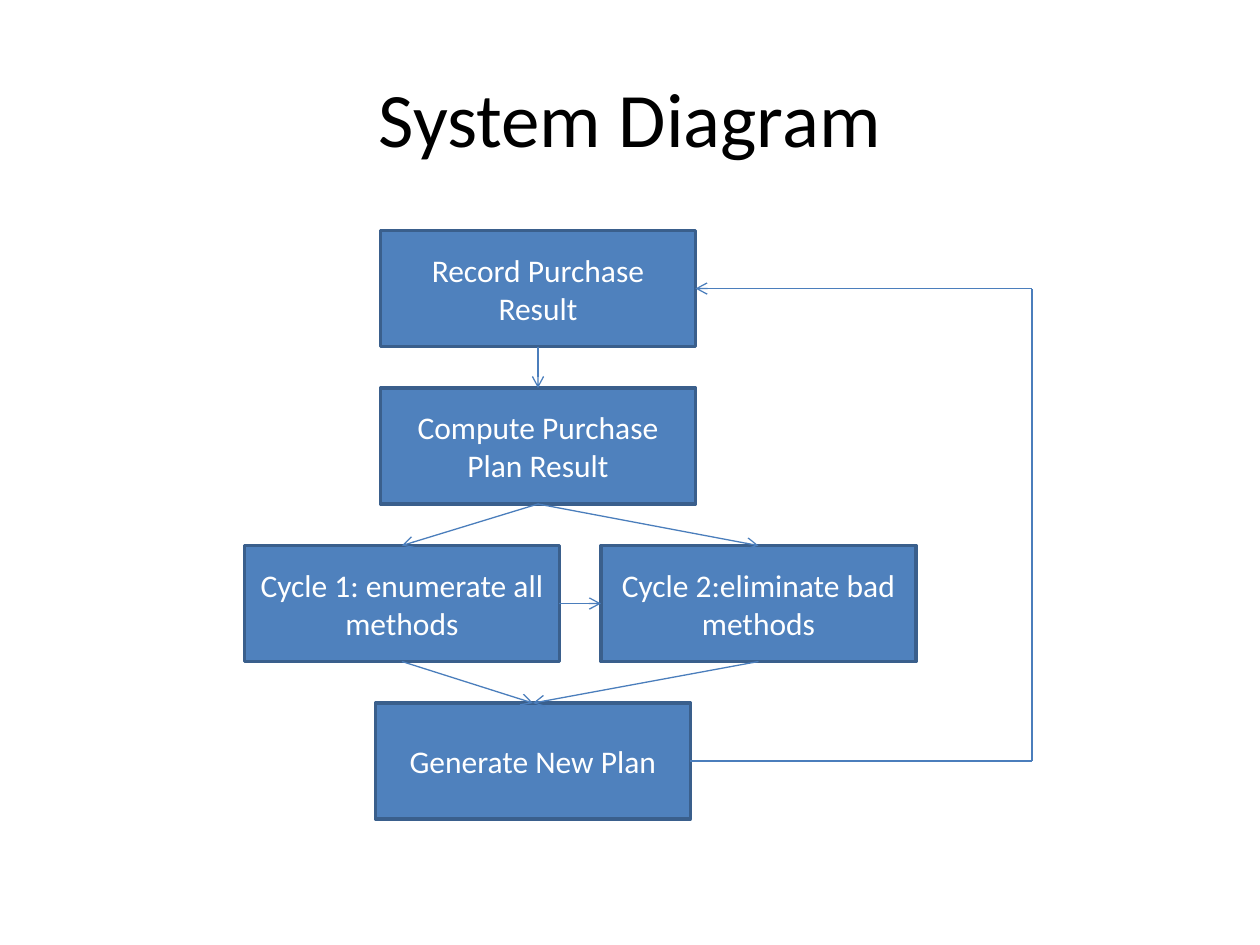
from lxml import etree
from pptx import Presentation
from pptx.dml.color import RGBColor
from pptx.enum import shapes, text
from pptx.oxml.ns import qn
from pptx.util import Inches, Pt

BOX_WIDTH, BOX_HEIGHT = 2.5, 0.92
FIRST_ROW, ROW_STEP = 1.83, 1.25
LOOP_X = 8.19
TOP, LEFT, BOTTOM, RIGHT = range(4)


def color(value):
    return RGBColor.from_string(value)


def style_text(frame, size, value):
    frame.word_wrap = True
    frame.vertical_anchor = text.MSO_ANCHOR.MIDDLE
    for para in frame.paragraphs:
        para.alignment = text.PP_ALIGN.CENTER
        for span in para.runs:
            span.font.name = "Calibri"
            span.font.size = Pt(size)
            span.font.color.rgb = color(value)


def add_title(page, wording):
    title = page.shapes.title
    title.left, title.top = Inches(0.5), Inches(0.3)
    title.width, title.height = Inches(9), Inches(1.25)
    title.text_frame.text = wording
    style_text(title.text_frame, 44, "000000")


def add_step(page, wording, left, row):
    box = page.shapes.add_shape(
        shapes.MSO_SHAPE.RECTANGLE, Inches(left), Inches(FIRST_ROW + row * ROW_STEP),
        Inches(BOX_WIDTH), Inches(BOX_HEIGHT))
    box.shadow.inherit = False
    box.fill.solid()
    box.fill.fore_color.rgb = color("4F81BD")
    box.line.color.rgb = color("3A5F8C")
    box.line.width = Pt(2)
    box.text_frame.text = wording
    style_text(box.text_frame, 18, "FFFFFF")
    return box


def add_line(page, start, end, arrow=True):
    """Draw a line; each end is a (box, side) pair or an (x, y) point in EMU."""
    line = page.shapes.add_connector(shapes.MSO_CONNECTOR.STRAIGHT, 0, 0, 0, 0)
    if isinstance(start[0], int):
        line.begin_x, line.begin_y = start
    else:
        line.begin_connect(*start)
    if isinstance(end[0], int):
        line.end_x, line.end_y = end
    else:
        line.end_connect(*end)
    line.line.color.rgb = color("4B7EBC")
    line.line.width = Pt(0.75)
    if arrow:
        etree.SubElement(line.line._get_or_add_ln(), qn("a:tailEnd"), type="arrow")
    etree.SubElement(line._element.spPr, qn("a:effectLst"))


def add_loop(page, source, target):
    """Lead from the right side of source, around, back to the right side of target."""
    lower, upper = ((Inches(LOOP_X), box.top + box.height // 2)
                    for box in (source, target))
    add_line(page, (source, RIGHT), lower, arrow=False)
    add_line(page, lower, upper, arrow=False)
    add_line(page, upper, (target, RIGHT))


def main():
    deck = Presentation()
    deck.slide_width, deck.slide_height = Inches(10), Inches(7.5)
    page = deck.slides.add_slide(deck.slide_layouts[5])
    add_title(page, "System Diagram")

    record = add_step(page, "Record Purchase Result", 3.02, 0)
    compute = add_step(page, "Compute Purchase Plan Result", 3.02, 1)
    enumerating = add_step(page, "Cycle 1: enumerate all methods", 1.94, 2)
    eliminating = add_step(page, "Cycle 2:eliminate bad methods", 4.77, 2)
    generate = add_step(page, "Generate New Plan", 2.98, 3)

    for upper, lower in ((record, compute), (compute, enumerating),
                         (compute, eliminating), (enumerating, generate),
                         (eliminating, generate)):
        add_line(page, (upper, BOTTOM), (lower, TOP))
    add_loop(page, generate, record)
    add_line(page, (enumerating, RIGHT), (eliminating, LEFT))

    deck.save("out.pptx")


if __name__ == "__main__":
    main()
